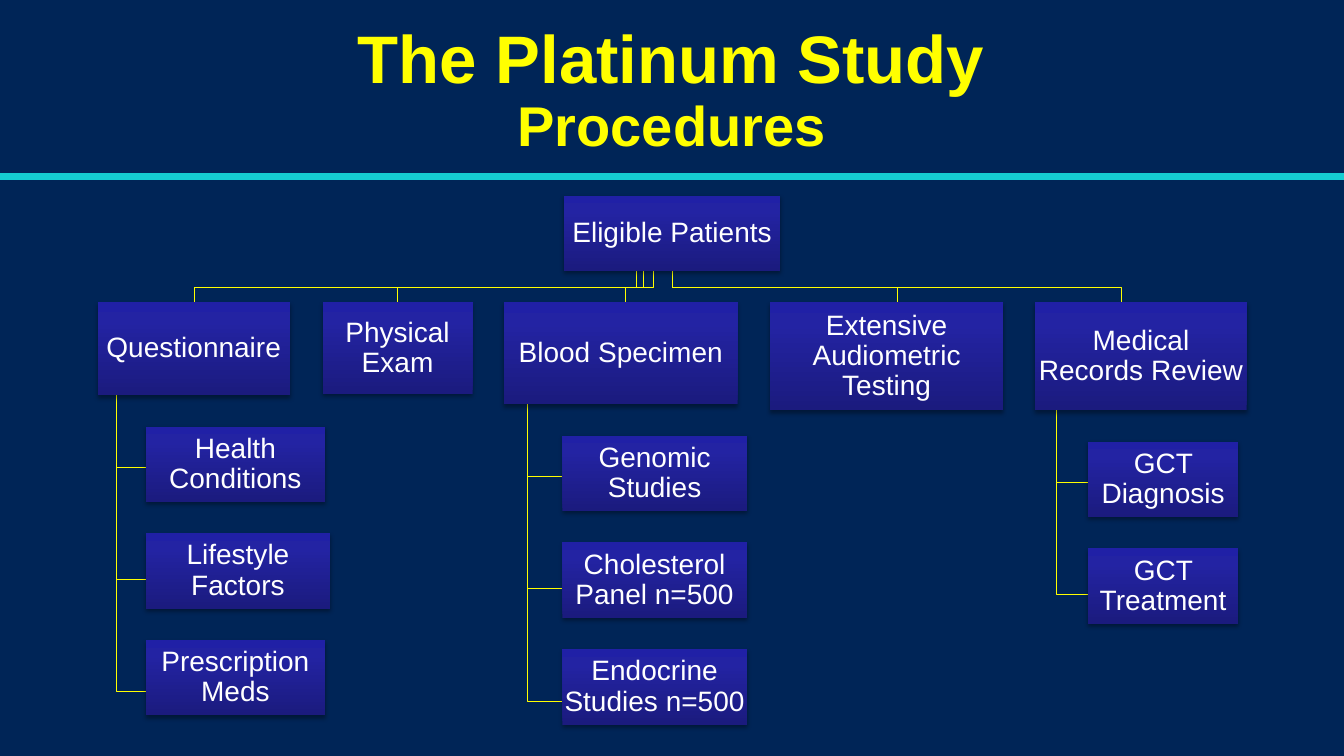
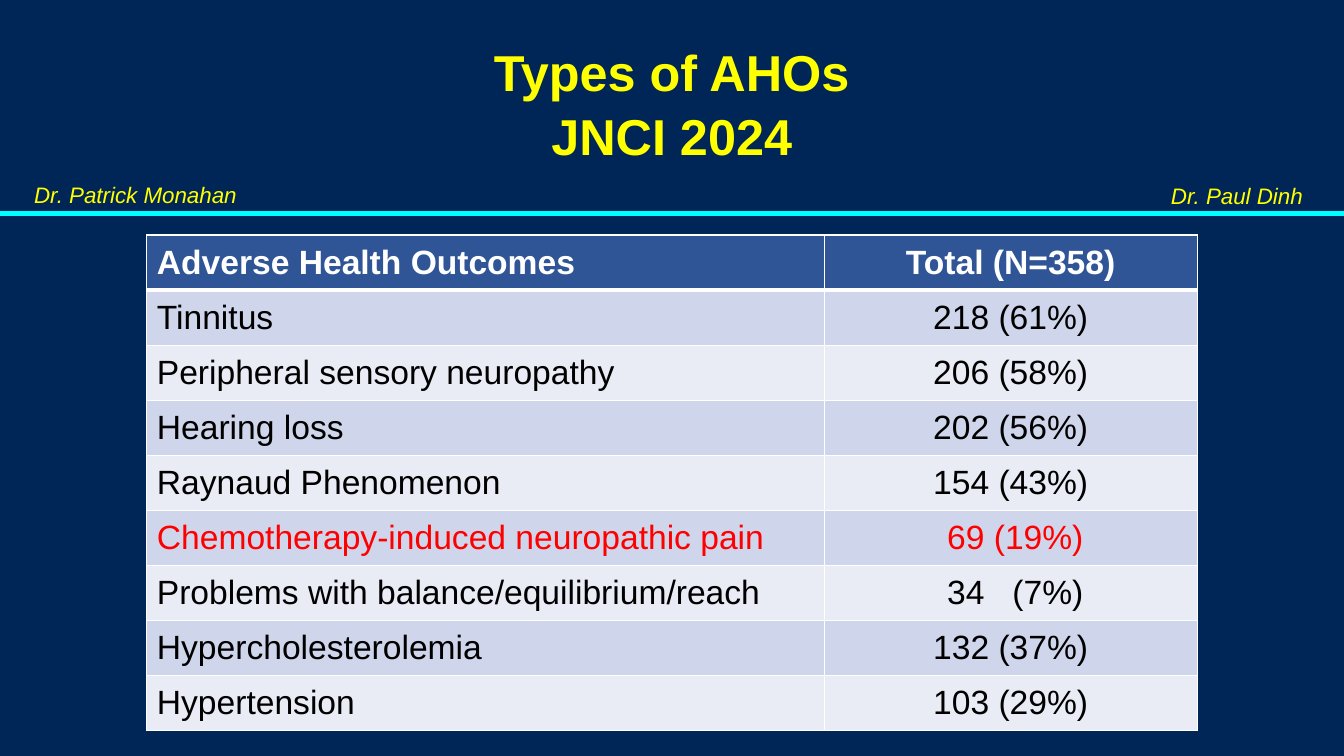
from dataclasses import dataclass
from itertools import cycle

from pptx import Presentation
from pptx.dml.color import RGBColor
from pptx.enum import shapes, text
from pptx.oxml import parse_xml
from pptx.oxml.ns import nsdecls, qn
from pptx.util import Cm, Pt


@dataclass(frozen=True)
class Theme:
    font: str = "Arial"
    background: str = "002557"
    accent: str = "FFFF00"
    light: str = "FFFFFF"
    dark: str = "000000"
    alert: str = "FF0000"
    study_rule: str = "15CDD1"
    outcome_rule: str = "00FFFF"
    header: str = "2F5597"
    bands: tuple = ("CFD5EA", "E9EBF5")
    box_stops: tuple = ((0, "1B1B7E"), (80, "2323A3"), (100, "2020A6"))
    study_sizes: tuple = (48, 40)
    outcome_size: int = 36
    table_size: int = 24
    box_size: int = 20
    name_size: int = 16


THEME = Theme()
WIDTH, HEIGHT = 33.87, 19.05

ROOT = ("Eligible Patients", (14.22, 4.93, 5.44, 1.9))
BRANCH_TOP, BUS_Y = 7.62, 7.24
LEAF_HEIGHT, LEAF_GAP = 1.9, 0.79
# Label, left, width, height, x where the line leaves the root,
# x where it reaches the branch, leaves with their widths
BRANCHES = [
    ("Medical\nRecords Review", 26.09, 5.33, 2.72, 16.94, 28.27,
     [("GCT Diagnosis", 3.78), ("GCT Treatment", 3.78)]),
    ("Extensive Audiometric Testing", 19.41, 5.87, 2.72, 16.94, 22.63, []),
    ("Blood Specimen", 12.7, 5.89, 2.57, 16.03, 15.77,
     [("Genomic Studies", 4.65), ("Cholesterol Panel n=500", 4.65),
      ("Endocrine Studies n=500", 4.65)]),
    ("Physical Exam", 8.13, 3.78, 2.31, 16.21, 10.01, []),
    ("Questionnaire", 2.46, 4.85, 2.34, 16.46, 4.9,
     [("Health Conditions", 4.52), ("Lifestyle Factors", 4.65),
      ("Prescription Meds", 4.52)]),
]

OUTCOMES = [
    ("Adverse Health Outcomes", "Total (N=358)"),
    ("Tinnitus", "218 (61%)"),
    ("Peripheral sensory neuropathy", "206 (58%)"),
    ("Hearing loss", "202 (56%)"),
    ("Raynaud Phenomenon", "154 (43%)"),
    ("Chemotherapy-induced neuropathic pain", " 69 (19%)"),
    ("Problems with balance/equilibrium/reach", " 34   (7%)"),
    ("Hypercholesterolemia", "132 (37%)"),
    ("Hypertension", "103 (29%)"),
]
HIGHLIGHTED_ROW = 5


def write(frame, content, sizes, color=THEME.accent, bold=False, italic=False,
          align=text.PP_ALIGN.LEFT, spacing=None):
    """Fill a text frame, one paragraph per line; sizes cycle over the lines."""
    frame.word_wrap = True
    for number, (line, size) in enumerate(zip(content.split("\n"), cycle(sizes))):
        paragraph = frame.add_paragraph() if number else frame.paragraphs[0]
        paragraph.alignment = align
        if spacing:
            paragraph.line_spacing = spacing
        run = paragraph.add_run()
        run.text = line
        run.font.name = THEME.font
        run.font.size = Pt(size)
        run.font.bold = bold
        run.font.italic = italic
        run.font.color.rgb = RGBColor.from_string(color)


def text_area(slide, box, content, sizes, anchor=text.MSO_ANCHOR.TOP, **style):
    frame = slide.shapes.add_textbox(*map(Cm, box)).text_frame
    frame.vertical_anchor = anchor
    write(frame, content, sizes, **style)


def base_slide(deck):
    slide = deck.slides.add_slide(deck.slide_layouts[6])
    slide.background.fill.solid()
    slide.background.fill.fore_color.rgb = RGBColor.from_string(THEME.background)
    return slide


def title_band(slide, box, content, sizes, rule_y, rule_color, rule_width, **style):
    """Centred title with a rule across the slide below it."""
    rule = slide.shapes.add_connector(
        shapes.MSO_CONNECTOR.STRAIGHT, 0, Cm(rule_y), Cm(WIDTH), Cm(rule_y))
    rule.line.color.rgb = RGBColor.from_string(rule_color)
    rule.line.width = Pt(rule_width)
    rule._element.spPr.append(parse_xml(f"<a:effectLst {nsdecls('a')}/>"))
    text_area(slide, box, content, sizes, bold=True,
              align=text.PP_ALIGN.CENTER, **style)


def bent_line(slide, *points):
    start, *rest = [(Cm(x), Cm(y)) for x, y in points]
    builder = slide.shapes.build_freeform(*start)
    builder.add_line_segments(rest, close=False)
    line = builder.convert_to_shape()
    line.shadow.inherit = False
    line.fill.background()
    line.line.color.rgb = RGBColor.from_string(THEME.accent)
    line.line.width = Pt(0.75)


def chart_box(slide, label, box):
    """Box with an upward gradient and a soft shadow below."""
    node = slide.shapes.add_shape(shapes.MSO_SHAPE.RECTANGLE, *map(Cm, box))
    node.line.fill.background()
    stops = "".join(
        f'<a:gs pos="{place * 1000}"><a:srgbClr val="{color}"/></a:gs>'
        for place, color in THEME.box_stops)
    properties = node._element.spPr
    properties.find(qn("a:prstGeom")).addnext(parse_xml(
        f'<a:gradFill {nsdecls("a")} rotWithShape="1"><a:gsLst>{stops}</a:gsLst>'
        '<a:lin ang="16200000" scaled="0"/></a:gradFill>'))
    properties.append(parse_xml(
        f'<a:effectLst {nsdecls("a")}><a:outerShdw blurRad="{Pt(3.1)}" '
        f'dist="{Pt(1.8)}" dir="5400000" rotWithShape="0">'
        f'<a:srgbClr val="{THEME.dark}"><a:alpha val="35000"/></a:srgbClr>'
        '</a:outerShdw></a:effectLst>'))
    frame = node.text_frame
    frame.margin_left = frame.margin_right = Cm(0.03)
    frame.margin_top = frame.margin_bottom = Cm(0.03)
    frame.vertical_anchor = text.MSO_ANCHOR.MIDDLE
    write(frame, label, [THEME.box_size], color=THEME.light,
          align=text.PP_ALIGN.CENTER, spacing=0.9)


def branch(slide, box, label, leaves):
    """Branch box with its leaves hanging from a trunk below it."""
    left, top, width, height = box
    bottom = top + height
    trunk, leaf_left = left + 0.1 * width, left + 0.25 * width
    pitch = LEAF_GAP + LEAF_HEIGHT
    for number in reversed(range(len(leaves))):
        drop = 1.05 * (LEAF_GAP + LEAF_HEIGHT / 2 + number * pitch)
        bent_line(slide, (trunk, bottom), (trunk, bottom + drop),
                  (leaf_left, bottom + drop))
    chart_box(slide, label, box)
    for number, (leaf, leaf_width) in enumerate(leaves):
        leaf_top = bottom + LEAF_GAP + number * pitch
        chart_box(slide, leaf, (leaf_left, leaf_top, leaf_width, LEAF_HEIGHT))


def procedures_slide(deck):
    slide = base_slide(deck)
    title_band(slide, (6.83, 0.43, 20.19, 3.76), "The Platinum Study\nProcedures",
               THEME.study_sizes, 4.45, THEME.study_rule, 4.5,
               anchor=text.MSO_ANCHOR.MIDDLE, spacing=0.9)
    root_label, root_box = ROOT
    root_bottom = root_box[1] + root_box[3]
    for label, left, width, height, stem, entry, leaves in BRANCHES:
        bent_line(slide, (stem, root_bottom), (stem, BUS_Y),
                  (entry, BUS_Y), (entry, BRANCH_TOP))
        branch(slide, (left, BRANCH_TOP, width, height), label, leaves)
    chart_box(slide, root_label, root_box)


def set_borders(cell, bottom_width):
    widths = {"lnL": 1, "lnR": 1, "lnT": 1, "lnB": bottom_width}
    for position, (side, width) in enumerate(widths.items()):
        cell._tc.get_or_add_tcPr().insert(position, parse_xml(
            f'<a:{side} {nsdecls("a")} w="{Pt(width)}"><a:solidFill>'
            f'<a:srgbClr val="{THEME.light}"/></a:solidFill></a:{side}>'))


def outcomes_table(slide, box):
    left, top, width, height = box
    table = slide.shapes.add_table(
        len(OUTCOMES), 2, *map(Cm, box)).table
    label_width = 17.07
    table.columns[0].width = Cm(label_width)
    table.columns[1].width = Cm(width - label_width)
    for number, values in enumerate(OUTCOMES):
        is_header = number == 0
        table.rows[number].height = Cm(height / len(OUTCOMES))
        fill = THEME.header if is_header else THEME.bands[(number - 1) % 2]
        ink = (THEME.light if is_header else
               THEME.alert if number == HIGHLIGHTED_ROW else THEME.dark)
        for column, value in enumerate(values):
            cell = table.cell(number, column)
            cell.fill.solid()
            cell.fill.fore_color.rgb = RGBColor.from_string(fill)
            cell.vertical_anchor = text.MSO_ANCHOR.MIDDLE
            set_borders(cell, 3 if is_header else 1)
            write(cell.text_frame, value, [THEME.table_size], color=ink,
                  bold=is_header,
                  align=text.PP_ALIGN.CENTER if column else text.PP_ALIGN.LEFT)


def outcomes_slide(deck):
    slide = base_slide(deck)
    title_band(slide, (1.27, 0.84, 31.32, 3.61), "Types of AHOs\nJNCI 2024",
               [THEME.outcome_size], 5.38, THEME.outcome_rule, 4, spacing=1.05)
    outcomes_table(slide, (3.7, 5.92, 26.47, 12.5))
    for name, box in (("Dr. Patrick Monahan", (0.61, 4.45, 5.82, 0.94)),
                      ("Dr. Paul Dinh", (29.26, 4.47, 4.6, 0.94))):
        text_area(slide, box, name, [THEME.name_size], italic=True)


def main():
    deck = Presentation()
    deck.slide_width, deck.slide_height = Cm(WIDTH), Cm(HEIGHT)
    procedures_slide(deck)
    outcomes_slide(deck)
    deck.save("out.pptx")


if __name__ == "__main__":
    main()
